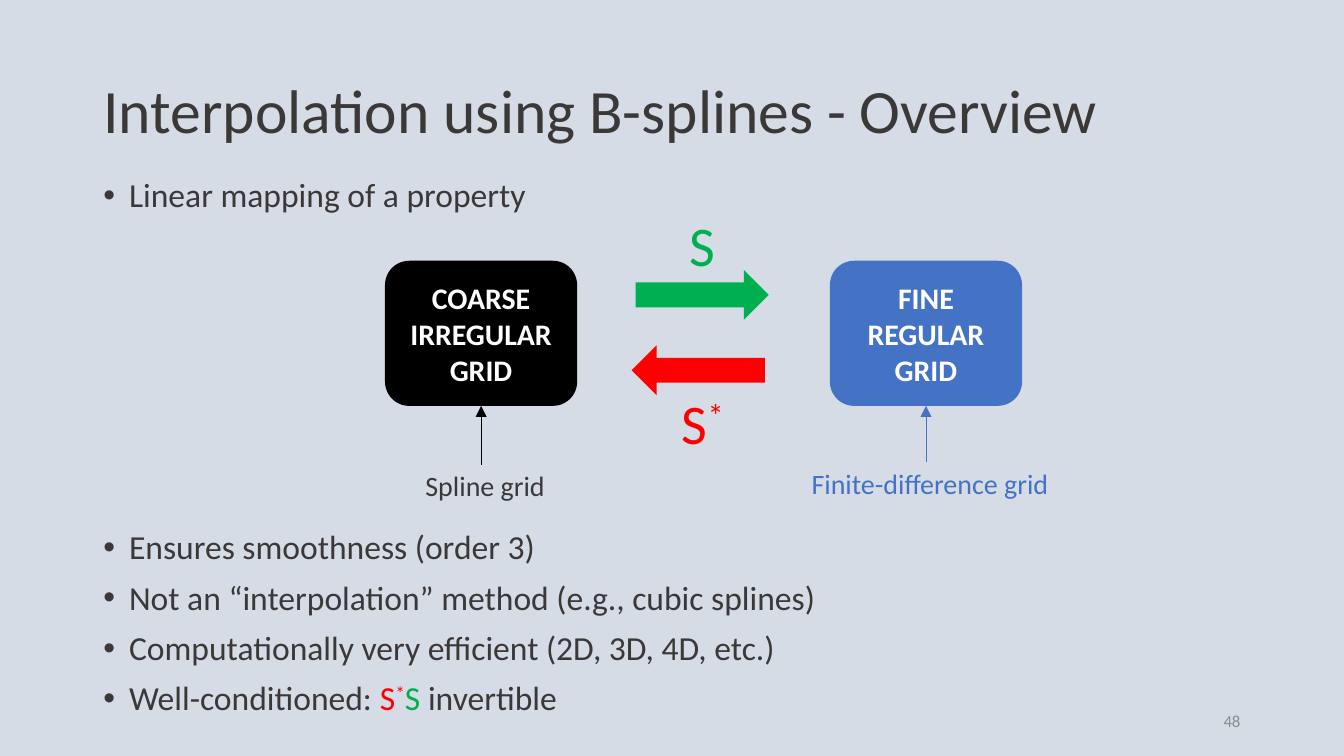
from lxml import etree
from pptx import Presentation
from pptx.dml.color import RGBColor
from pptx.enum.shapes import MSO_CONNECTOR, MSO_SHAPE
from pptx.enum.text import MSO_ANCHOR, PP_ALIGN
from pptx.oxml.ns import qn
from pptx.util import Inches, Pt

ROUNDED = MSO_SHAPE.ROUNDED_RECTANGLE
RIGHT_ARROW = MSO_SHAPE.RIGHT_ARROW
STRAIGHT = MSO_CONNECTOR.STRAIGHT
TOP, MIDDLE = MSO_ANCHOR.TOP, MSO_ANCHOR.MIDDLE
LEFT, CENTER, RIGHT = PP_ALIGN.LEFT, PP_ALIGN.CENTER, PP_ALIGN.RIGHT

BACKGROUND = RGBColor(0xD6, 0xDC, 0xE5)
INK = RGBColor(0x3B, 0x38, 0x38)
GRAY = RGBColor(0x8C, 0x8C, 0x8C)
BLACK = RGBColor(0x00, 0x00, 0x00)
WHITE = RGBColor(0xFF, 0xFF, 0xFF)
BLUE = RGBColor(0x44, 0x72, 0xC4)
GREEN = RGBColor(0x00, 0xB0, 0x50)
RED = RGBColor(0xFF, 0x00, 0x00)

FONT = "Calibri"
SLIDE_WIDTH = Inches(10)
SLIDE_HEIGHT = SLIDE_WIDTH * 9 // 16
CELL = SLIDE_WIDTH // 100
SIDE, CONTENT_WIDTH = 6.9, 86.2
NODE_WIDTH, NODE_HEIGHT, NODE_INDENT = 14.3, 10.8, 2.55
ARROW_WIDTH, ARROW_HEIGHT = 9.9, 3.7
CAPTION_HEIGHT, SYMBOL_HEIGHT = 3.5, 6.1
BULLET_INDENT = Inches(0.19)


def on_grid(*cells):
    return [round(cell * CELL) for cell in cells]


def add_bullet(paragraph):
    properties = paragraph._p.get_or_add_pPr()
    properties.set("marL", str(BULLET_INDENT))
    properties.set("indent", str(-BULLET_INDENT))
    etree.SubElement(properties, qn("a:buFont")).set("typeface", "Arial")
    etree.SubElement(properties, qn("a:buChar")).set("char", "•")


def write_text(shape, paragraphs, size, color=INK, bold=False, align=LEFT,
               anchor=TOP, spacing=None, gap=0, bullets=False, insets=(0.1, 0.05)):
    frame = shape.text_frame
    frame.word_wrap = True
    frame.vertical_anchor = anchor
    frame.margin_left = frame.margin_right = Inches(insets[0])
    frame.margin_top = frame.margin_bottom = Inches(insets[1])
    for index, runs in enumerate(paragraphs):
        paragraph = frame.add_paragraph() if index else frame.paragraphs[0]
        paragraph.alignment = align
        if spacing:
            paragraph.line_spacing = spacing
        paragraph.space_before = Pt(gap if index else 0)
        if bullets:
            add_bullet(paragraph)
        for text, run_color in [(runs, color)] if isinstance(runs, str) else runs:
            run = paragraph.add_run()
            run.text = text
            run.font.name = FONT
            run.font.size = Pt(size)
            run.font.bold = bold
            run.font.color.rgb = run_color
            if text == "*":
                run._r.get_or_add_rPr().set("baseline", "30000")


def add_text(slide, box, paragraphs, **text_format):
    write_text(slide.shapes.add_textbox(*on_grid(*box)), paragraphs, **text_format)


def add_filled_shape(slide, kind, box, color):
    shape = slide.shapes.add_shape(kind, *on_grid(*box))
    shape.shadow.inherit = False
    shape.fill.solid()
    shape.fill.fore_color.rgb = color
    shape.line.fill.background()
    return shape


def add_title(slide, box, title):
    add_text(slide, box, [title], size=33, anchor=MIDDLE, spacing=0.9, insets=(0.08, 0.04))


def add_bullets(slide, box, paragraphs):
    add_text(slide, box, paragraphs, size=18, spacing=0.9, gap=7.5,
             bullets=True, insets=(0.08, 0.04))


def add_page_number(slide, box, number):
    add_text(slide, box, [number], size=9, color=GRAY, align=RIGHT,
             anchor=MIDDLE, insets=(0.08, 0.04))


def add_grid_node(slide, box, name, fill, caption, caption_color):
    left, top, width, height = box
    node = add_filled_shape(slide, ROUNDED, (left + NODE_INDENT, top, NODE_WIDTH, NODE_HEIGHT), fill)
    write_text(node, name.split(), size=16, color=WHITE, bold=True, align=CENTER, anchor=MIDDLE)

    caption_top = top + height - CAPTION_HEIGHT
    add_text(slide, (left, caption_top, width, CAPTION_HEIGHT), [caption],
             size=15, color=caption_color, align=CENTER)

    center = left + NODE_INDENT + NODE_WIDTH / 2
    pointer = slide.shapes.add_connector(
        STRAIGHT, *on_grid(center, caption_top + 0.2, center, top + NODE_HEIGHT))
    pointer.end_connect(node, 2)
    pointer.line.color.rgb = fill
    pointer.line.width = Pt(0.5)
    etree.SubElement(pointer.line._get_or_add_ln(), qn("a:tailEnd")).set("type", "triangle")
    etree.SubElement(pointer._element.spPr, qn("a:effectLst"))


def add_operator(slide, box, symbol, color, backward=False):
    left, top, width, height = box
    arrow_top = top if backward else top + height - ARROW_HEIGHT
    symbol_top = top + height - SYMBOL_HEIGHT if backward else top
    arrow = add_filled_shape(slide, RIGHT_ARROW, (left, arrow_top, ARROW_WIDTH, ARROW_HEIGHT), color)
    arrow.rotation = 180 if backward else 0
    add_text(slide, (left, symbol_top, width, SYMBOL_HEIGHT),
             [[(character, color) for character in symbol]], size=30, align=CENTER)


def main():
    presentation = Presentation()
    presentation.slide_width = SLIDE_WIDTH
    presentation.slide_height = SLIDE_HEIGHT
    slide = presentation.slides.add_slide(presentation.slide_layouts[6])
    slide.background.fill.solid()
    slide.background.fill.fore_color.rgb = BACKGROUND

    add_title(slide, (SIDE, 3, CONTENT_WIDTH, 10.9), "Interpolation using B-splines - Overview")
    add_bullets(slide, (SIDE, 12.9, CONTENT_WIDTH, 4), ["Linear mapping of a property"])
    add_bullets(slide, (SIDE, 39.1, CONTENT_WIDTH, 15), [
        "Ensures smoothness (order 3)",
        "Not an “interpolation” method (e.g., cubic splines)",
        "Computationally very efficient (2D, 3D, 4D, etc.)",
        [("Well-conditioned: ", INK), ("S", RED), ("*", RED), ("S ", GREEN), ("invertible", INK)],
    ])
    add_grid_node(slide, (26.1, 19.4, 20, 18.5), "COARSE IRREGULAR GRID", BLACK, "Spline grid", INK)
    add_grid_node(slide, (59.2, 19.4, 20, 18.3), "FINE REGULAR GRID", BLUE,
                  "Finite-difference grid", BLUE)
    add_operator(slide, (47.3, 15.2, 9.9, 8.6), "S", GREEN)
    add_operator(slide, (47, 25.7, 10.6, 8.8), "S*", RED, backward=True)
    add_page_number(slide, (70.6, 52.1, 22.5, 3), "48")
    presentation.save("out.pptx")


if __name__ == "__main__":
    main()
